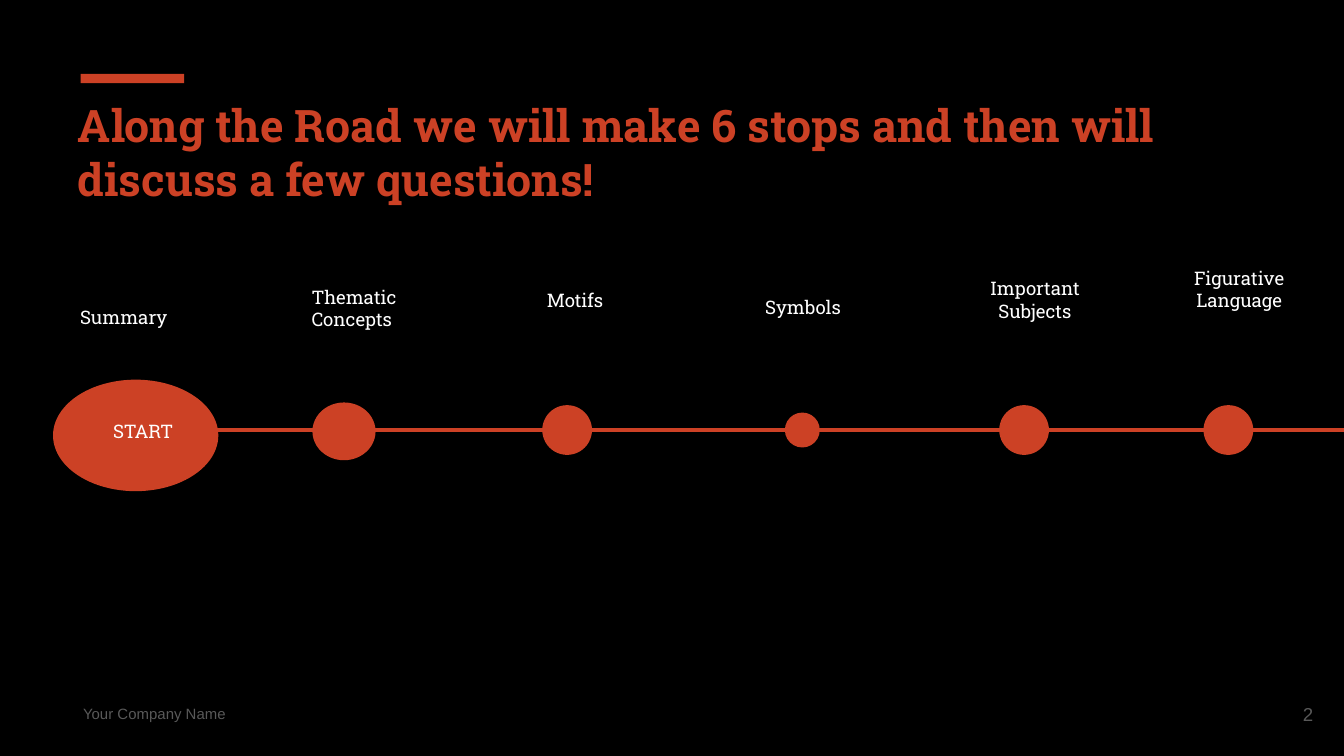
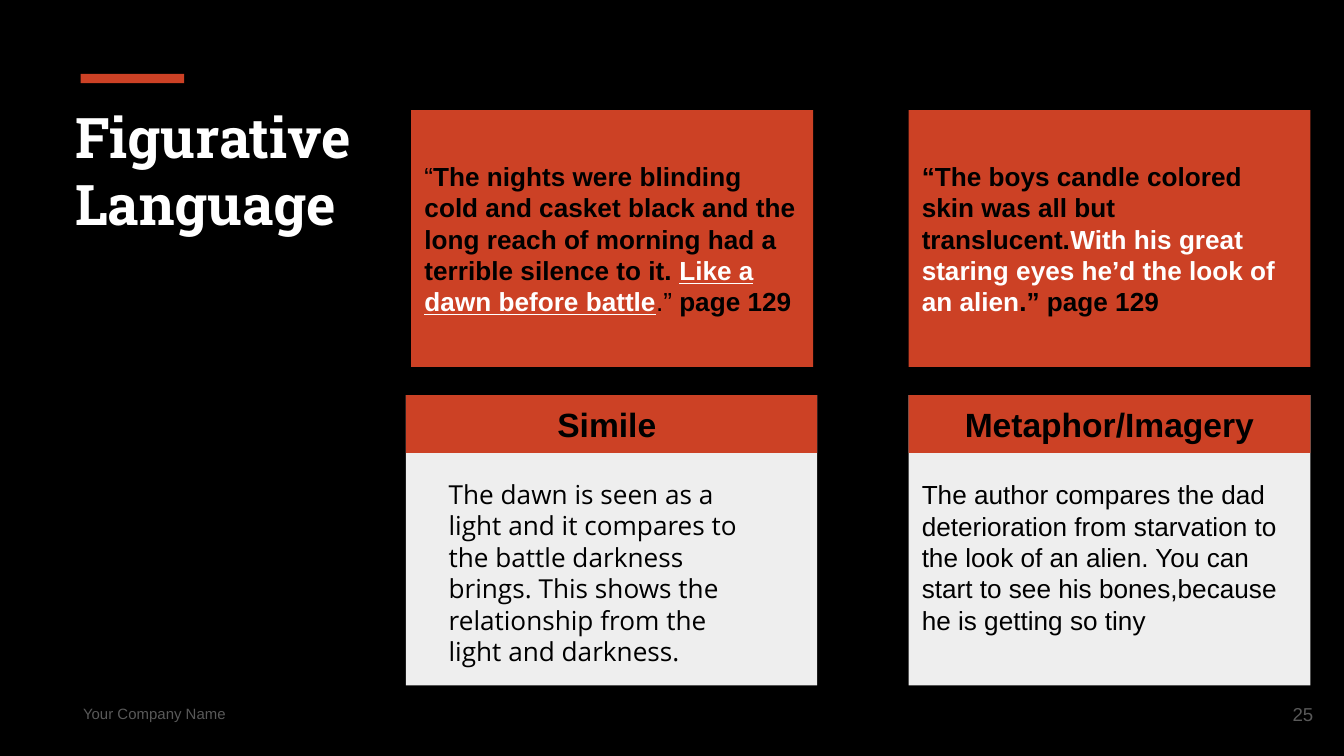
from pptx import Presentation
from pptx.dml.color import RGBColor
from pptx.enum import shapes, text
from pptx.oxml.ns import qn
from pptx.util import Inches, Pt
from lxml import etree

COLORS = {
    "background": "000000",
    "accent": "CC4125",
    "panel": "EEEEEE",
    "light": "FFFFFF",
    "dark": "000000",
    "footer": "595959",
}
HEADING_FONT, BODY_FONT, NOTE_FONT = "Roboto Slab", "Arial", "Open Sans"
LEFT, CENTER, RIGHT = text.PP_ALIGN.LEFT, text.PP_ALIGN.CENTER, text.PP_ALIGN.RIGHT
TOP, MIDDLE = text.MSO_ANCHOR.TOP, text.MSO_ANCHOR.MIDDLE
RECT, OVAL = shapes.MSO_SHAPE.RECTANGLE, shapes.MSO_SHAPE.OVAL


def color(name):
    return RGBColor.from_string(COLORS[name])


def write(shape, runs, size, font=BODY_FONT, ink="dark", bold=False,
          align=LEFT, anchor=MIDDLE, top_inset=0.1):
    """Fill a shape with one paragraph; runs are (words, overrides) pairs."""
    frame = shape.text_frame
    frame.word_wrap = True
    frame.auto_size = text.MSO_AUTO_SIZE.NONE
    frame.vertical_anchor = anchor
    frame.margin_left = frame.margin_right = frame.margin_bottom = Inches(0.1)
    frame.margin_top = Inches(top_inset)

    paragraph = frame.paragraphs[0]
    paragraph.alignment = align
    paragraph.font.name, paragraph.font.size = font, Pt(size)
    paragraph.font.bold = bold
    paragraph.font.color.rgb = color(ink)
    if isinstance(runs, str):
        runs = [(runs, {})]
    for words, overrides in runs:
        run = paragraph.add_run()
        run.text = words
        if "ink" in overrides:
            run.font.color.rgb = color(overrides["ink"])
        if "bold" in overrides:
            run.font.bold = overrides["bold"]
        if "underline" in overrides:
            run.font.underline = overrides["underline"]


def add_label(slide, box, words, size, **style):
    label = slide.shapes.add_textbox(*map(Inches, box))
    write(label, words, size, **style)


def add_block(slide, box, fill, kind=RECT):
    block = slide.shapes.add_shape(kind, *map(Inches, box))
    block.shadow.inherit = False
    block.fill.solid()
    block.fill.fore_color.rgb = color(fill)
    block.line.fill.background()
    return block


def add_base_slide(prs, number, title, title_box, title_size, title_ink):
    """Slide with the accent bar, title, company footer and page number."""
    slide = prs.slides.add_slide(prs.slide_layouts[5])
    add_block(slide, (0.6, 0.55, 0.77, 0.07), "accent")
    add_label(slide, (0.52, 5.18, 1.67, 0.26), "Your Company Name", 8, ink="footer")
    add_label(slide, (9.27, 5.1, 0.6, 0.43), str(number), 10, ink="footer", align=RIGHT)

    heading = slide.shapes.title
    heading.left, heading.top, heading.width, heading.height = map(Inches, title_box)
    write(heading, title, title_size, font=HEADING_FONT, ink=title_ink,
          bold=True, anchor=TOP)
    return slide


def add_road(slide, box, stops, names):
    """Horizontal road along the top of the box, with its stops and their names.

    Stops are (x, y, width, height) of the centre and size, names are
    (words, box, alignment); all positions count from the left end of the road.
    """
    left, top, length = box
    road = slide.shapes.add_connector(
        shapes.MSO_CONNECTOR.STRAIGHT,
        Inches(left), Inches(top), Inches(left + length), Inches(top))
    road.line.color.rgb = color("accent")
    road.line.width = Pt(2.25)
    etree.SubElement(road._element.spPr, qn("a:effectLst"))

    for x, y, width, height in stops:
        add_block(slide, (left + x - width / 2, top + y - height / 2, width, height),
                  "accent", OVAL)
    for words, (x, y, width, height), align in names:
        add_label(slide, (left + x, top + y, width, height), words, 10,
                  font=HEADING_FONT, ink="light", align=align)


def add_explanation(slide, box, device, header_height=0.43):
    """Panel with a coloured header naming the device; returns the panel."""
    left, top, width, _ = box
    panel = add_block(slide, box, "panel")
    header = add_block(slide, (left, top, width, header_height), "accent")
    write(header, device, 18, bold=True, align=CENTER)
    return panel


def build_road_slide(prs):
    slide = add_base_slide(
        prs, 2, "Along the Road we will make 6 stops and then will discuss a few questions!",
        (0.48, 0.63, 9.19, 1.16), 24, "accent")
    regular = (0.37, 0.37)
    stops = [
        (-0.15, 0.04, 1.23, 0.83),
        (1.4, 0.01, 0.47, 0.43),
        (3.06, 0, *regular),
        (4.81, 0, 0.26, 0.26),
        (6.46, 0, *regular),
        (7.98, 0, *regular),
    ]
    names = [
        ("Summary", (-0.77, -1.13, 1.06, 0.58), CENTER),
        ("Thematic Concepts", (1.06, -1.15, 1.33, 0.48), LEFT),
        ("Motifs", (2.81, -1.13, 0.77, 0.32), LEFT),
        ("Symbols", (4.43, -1.02, 0.77, 0.21), CENTER),
        ("Important Subjects", (6.09, -1.13, 0.9, 0.32), CENTER),
        ("Figurative Language", (7.53, -1.29, 1.06, 0.48), CENTER),
        ("START", (-0.43, -0.1, 0.67, 0.21), CENTER),
    ]
    add_road(slide, (1.16, 3.2, 8.84), stops, names)


def build_language_slide(prs):
    slide = add_base_slide(prs, 25, "Figurative Language",
                           (0.46, 0.66, 2.54, 2.22), 30, "light")

    # Simile
    simile_quote = add_block(slide, (3.06, 0.82, 2.99, 1.91), "accent")
    write(simile_quote, [
        ("“", {}),
        ("The nights were blinding cold and casket black and the long reach of "
         "morning had a terrible silence to it. ", {"bold": True}),
        ("Like a dawn before battle", {"bold": True, "ink": "light", "underline": True}),
        (".” ", {}),
        ("page 129", {"bold": True}),
    ], 14)
    add_explanation(slide, (3.02, 2.94, 3.06, 2.16), "Simile ")
    add_label(slide, (3.24, 3.46, 2.54, 1.48),
              "The dawn is seen as a light and it compares to the battle darkness "
              "brings. This shows the relationship from the light and darkness.",
              14, font=NOTE_FONT, anchor=TOP)

    # Metaphor
    metaphor_quote = add_block(slide, (6.76, 0.82, 2.99, 1.91), "accent")
    write(metaphor_quote, [
        ("“The boys candle colored skin was all but translucent.", {}),
        ("With his great staring eyes he’d the look of an alien", {"ink": "light"}),
        (".” page 129", {}),
    ], 14, bold=True)
    metaphor = add_explanation(slide, (6.76, 2.94, 2.99, 2.16), "Metaphor/Imagery")
    write(metaphor,
          "The author compares the dad deterioration from starvation to the look of "
          "an alien. You can start to see his bones,because he is getting so tiny",
          14, top_inset=0.35)


def main():
    prs = Presentation()
    # Widescreen, 16:9
    prs.slide_width = Inches(10)
    prs.slide_height = prs.slide_width * 9 // 16
    backdrop = prs.slide_master.background.fill
    backdrop.solid()
    backdrop.fore_color.rgb = color("background")
    build_road_slide(prs)
    build_language_slide(prs)
    prs.save("out.pptx")


if __name__ == "__main__":
    main()
